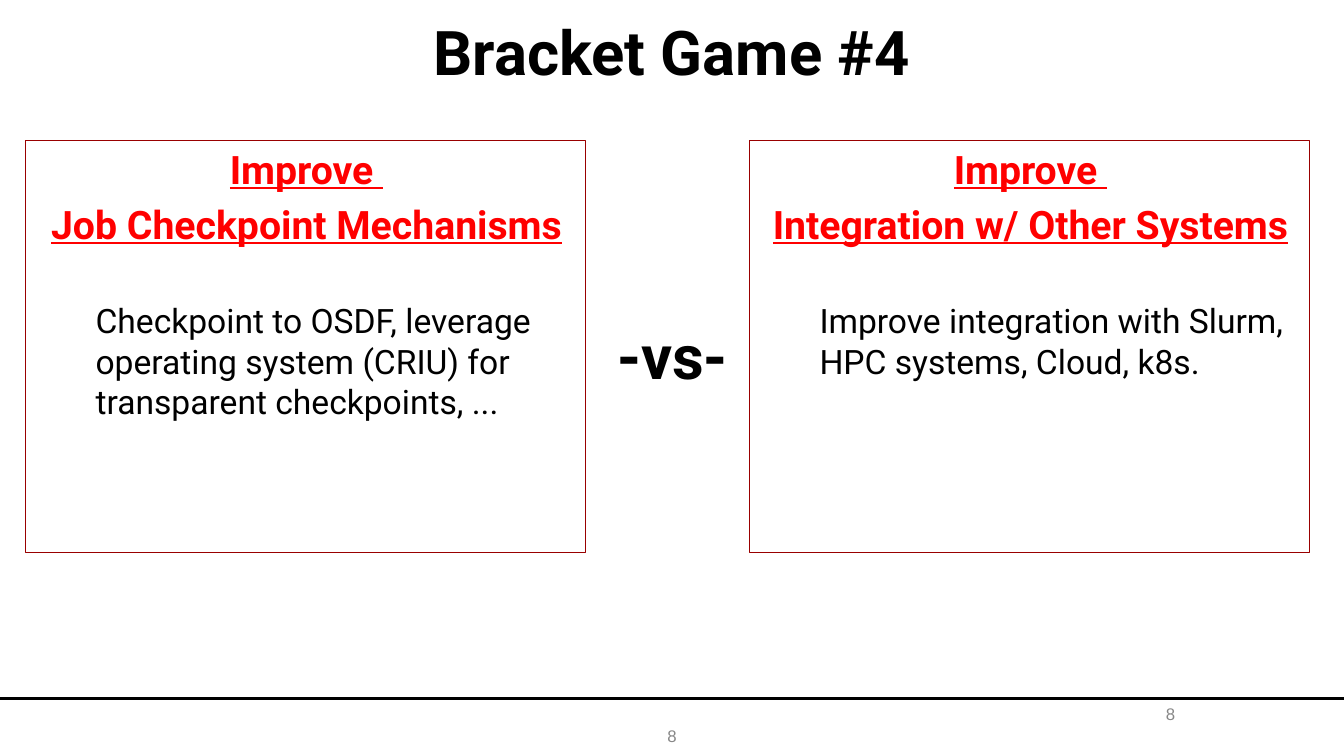
from pptx import Presentation
from pptx.dml.color import RGBColor
from pptx.enum.shapes import MSO_CONNECTOR, MSO_SHAPE
from pptx.enum.text import MSO_ANCHOR, PP_ALIGN
from pptx.oxml.ns import qn
from pptx.util import Inches, Pt
from lxml import etree

SLIDE_WIDTH = 13.33
SLIDE_HEIGHT = 7.5
CARD_TOP = 1.39
CARD_WIDTH = 5.56
CARD_HEIGHT = 4.09


def color(value):
    return RGBColor.from_string(value)


def add_span(para, text, size, hue, font="Roboto", bold=False, underline=False):
    span = para.add_run()
    span.text = text
    span.font.name = font
    span.font.size = Pt(size)
    span.font.bold = bold
    span.font.underline = underline
    span.font.color.rgb = color(hue)


def indent(para, left):
    properties = para._p.get_or_add_pPr()
    properties.set("marL", str(Inches(left)))
    properties.set("indent", "0")


def add_label(page, text, left, top, width, height, size, hue="000000",
              font="Roboto", bold=True):
    box = page.shapes.add_textbox(Inches(left), Inches(top), Inches(width), Inches(height))
    frame = box.text_frame
    frame.word_wrap = True
    frame.vertical_anchor = MSO_ANCHOR.MIDDLE
    para = frame.paragraphs[0]
    para.alignment = PP_ALIGN.CENTER
    add_span(para, text, size, hue, font, bold)


def add_page_number(page, left, top, width, height):
    add_label(page, "8", left, top, width, height, 12, "888888", "Arial", False)


def add_footer_line(page, top):
    line = page.shapes.add_connector(
        MSO_CONNECTOR.STRAIGHT, 0, Inches(top), Inches(SLIDE_WIDTH), Inches(top))
    line.line.color.rgb = color("000000")
    line.line.width = Pt(2.25)
    etree.SubElement(line._element.spPr, qn("a:effectLst"))


def add_contender(page, left, headings, description):
    card = page.shapes.add_shape(
        MSO_SHAPE.RECTANGLE, Inches(left), Inches(CARD_TOP),
        Inches(CARD_WIDTH), Inches(CARD_HEIGHT))
    card.shadow.inherit = False
    card.fill.background()
    card.line.color.rgb = color("990000")
    card.line.width = Pt(0.75)
    frame = card.text_frame
    frame.word_wrap = True
    frame.vertical_anchor = MSO_ANCHOR.TOP
    for index, heading in enumerate(headings):
        para = frame.add_paragraph() if index else frame.paragraphs[0]
        para.alignment = PP_ALIGN.CENTER
        indent(para, 0.02)
        if index:
            para.space_before = Pt(5.6)
        add_span(para, heading, 28, "FF0000", bold=True, underline=True)
    para = frame.add_paragraph()
    para.alignment = PP_ALIGN.LEFT
    indent(para, 0.6)
    para.space_before = Pt(38)
    add_span(para, description, 24, "000000")


def main():
    deck = Presentation()
    deck.slide_width = Inches(SLIDE_WIDTH)
    deck.slide_height = Inches(SLIDE_HEIGHT)
    page = deck.slides.add_slide(deck.slide_layouts[6])

    add_footer_line(page, 6.93)
    add_page_number(page, 5.11, 7.1, 3.11, 0.4)
    add_label(page, "Bracket Game #4", 0, 0, SLIDE_WIDTH, 1, 44)
    add_contender(
        page, 0.25, ["Improve ", "Job Checkpoint Mechanisms"],
        "Checkpoint to OSDF, leverage operating system (CRIU) "
        "for transparent checkpoints, ...")
    add_page_number(page, 10.89, 6.83, 1.44, 0.5)
    add_label(page, "-vs-", 5.91, 3.02, 1.52, 1, 44)
    add_contender(
        page, 7.43, ["Improve ", "Integration w/ Other Systems"],
        "Improve integration with Slurm, HPC systems, Cloud, k8s.")

    deck.save("out.pptx")


if __name__ == "__main__":
    main()
